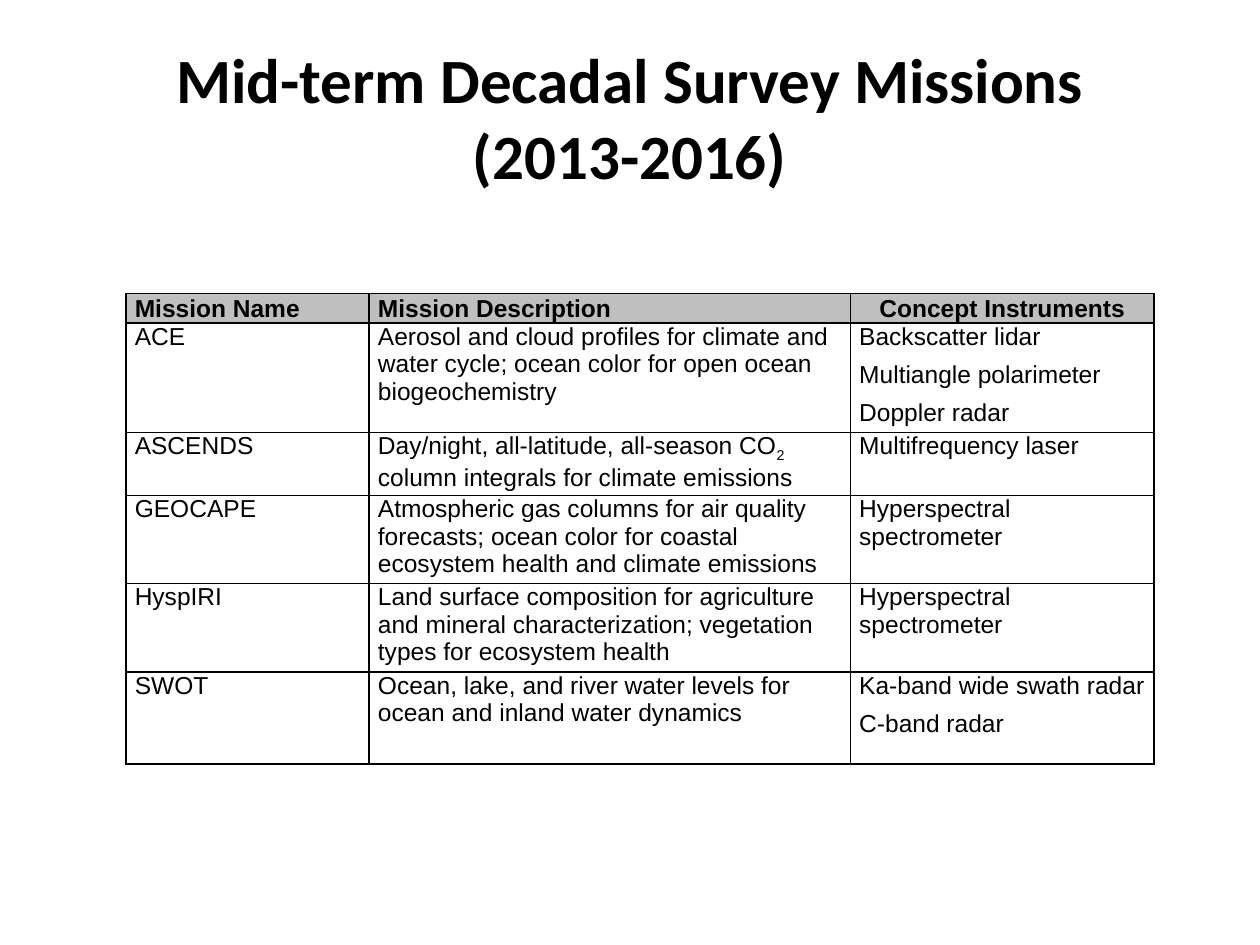
from pptx import Presentation
from pptx.dml.color import RGBColor
from pptx.enum import text as t
from pptx.oxml import ns, parse_xml
from pptx.util import Inches, Pt

HEX = {"ink": "000000", "head": "BFBFBF"}
COLS = [1.93, 3.82, 2.41]
ROWS = [0.22, 0.83, 0.47, 0.66, 0.65, 0.73]
HEADS = ["Mission Name", "Mission Description", "Concept Instruments"]

# Name, description runs, instruments; a run "2" is the subscript
MISSIONS = [
    ("ACE",
     ["Aerosol and cloud profiles for climate and water cycle; "
      "ocean color for open ocean biogeochemistry"],
     ["Backscatter lidar", "Multiangle polarimeter", "Doppler radar"]),
    ("ASCENDS",
     ["Day/night, all-latitude, all-season CO", "2",
      " column integrals for climate emissions"],
     ["Multifrequency laser"]),
    ("GEOCAPE",
     ["Atmospheric gas columns for air quality forecasts; "
      "ocean color for coastal ecosystem health and climate emissions"],
     ["Hyperspectral spectrometer"]),
    ("HyspIRI",
     ["Land surface composition for agriculture and mineral "
      "characterization; vegetation types for ecosystem health"],
     ["Hyperspectral spectrometer"]),
    ("SWOT",
     ["Ocean, lake, and river water levels for ocean and inland "
      "water dynamics"],
     ["Ka-band wide swath radar", "C-band radar"]),
]


def color(name):
    return RGBColor.from_string(HEX[name])


def add_run(par, words, font, size, bold=False):
    run = par.add_run()
    run.text = words
    run.font.name, run.font.size, run.font.bold = font, Pt(size), bold
    run.font.color.rgb = color("ink")
    return run


def add_title(slide, lines):
    box = slide.shapes.add_textbox(Inches(0.5), Inches(0.3), Inches(9), Inches(1.25))
    frame = box.text_frame
    frame.word_wrap = True
    frame.vertical_anchor = t.MSO_ANCHOR.MIDDLE
    par = frame.paragraphs[0]
    par.alignment = t.PP_ALIGN.CENTER
    for i, line in enumerate(lines):
        if i:
            par.add_line_break()
        add_run(par, line, "Calibri", 36, True)


def add_border(cell, width=1):
    props = cell._tc.get_or_add_tcPr()
    for side in "LRTB":
        props.append(parse_xml(
            f'<a:ln{side} {ns.nsdecls("a")} w="{Pt(width)}"><a:solidFill>'
            f'<a:srgbClr val="{HEX["ink"]}"/></a:solidFill></a:ln{side}>'))


def fill_cell(cell, pars, head=False, align=t.PP_ALIGN.LEFT):
    """Write paragraphs, each a list of runs, into one bordered cell."""
    cell.margin_left = cell.margin_right = Inches(0.07)
    cell.margin_top = cell.margin_bottom = 0
    cell.vertical_anchor = t.MSO_ANCHOR.BOTTOM if head else t.MSO_ANCHOR.TOP
    add_border(cell)
    if head:
        cell.fill.solid()
        cell.fill.fore_color.rgb = color("head")
    else:
        cell.fill.background()
    frame = cell.text_frame
    for i, runs in enumerate(pars):
        par = frame.add_paragraph() if i else frame.paragraphs[0]
        par.alignment = align
        par.space_before = par.space_after = Pt(6 if head else 3)
        for words in runs:
            run = add_run(par, words, "Arial", 14, head)
            if words == "2":
                run.font._element.set("baseline", "-25000")


def add_grid(slide):
    table = slide.shapes.add_table(
        len(ROWS), len(COLS), Inches(1), Inches(2.33),
        Inches(sum(COLS)), Inches(sum(ROWS))).table
    table.first_row = table.horz_banding = False
    for col, width in zip(table.columns, COLS):
        col.width = Inches(width)
    for row, height in zip(table.rows, ROWS):
        row.height = Inches(height)

    # Header row: only the last heading is centred
    for c, head in enumerate(HEADS):
        align = t.PP_ALIGN.CENTER if c == 2 else t.PP_ALIGN.LEFT
        fill_cell(table.cell(0, c), [[head]], True, align)

    # One row per mission
    for r, (name, about, tools) in enumerate(MISSIONS, 1):
        fill_cell(table.cell(r, 0), [[name]])
        fill_cell(table.cell(r, 1), [about])
        fill_cell(table.cell(r, 2), [[tool] for tool in tools])


def main():
    deck = Presentation()
    deck.slide_width, deck.slide_height = Inches(10), Inches(7.5)
    slide = deck.slides.add_slide(deck.slide_layouts[6])
    add_title(slide, ["Mid-term Decadal Survey Missions", "(2013-2016)"])
    add_grid(slide)
    deck.save("out.pptx")


if __name__ == "__main__":
    main()
